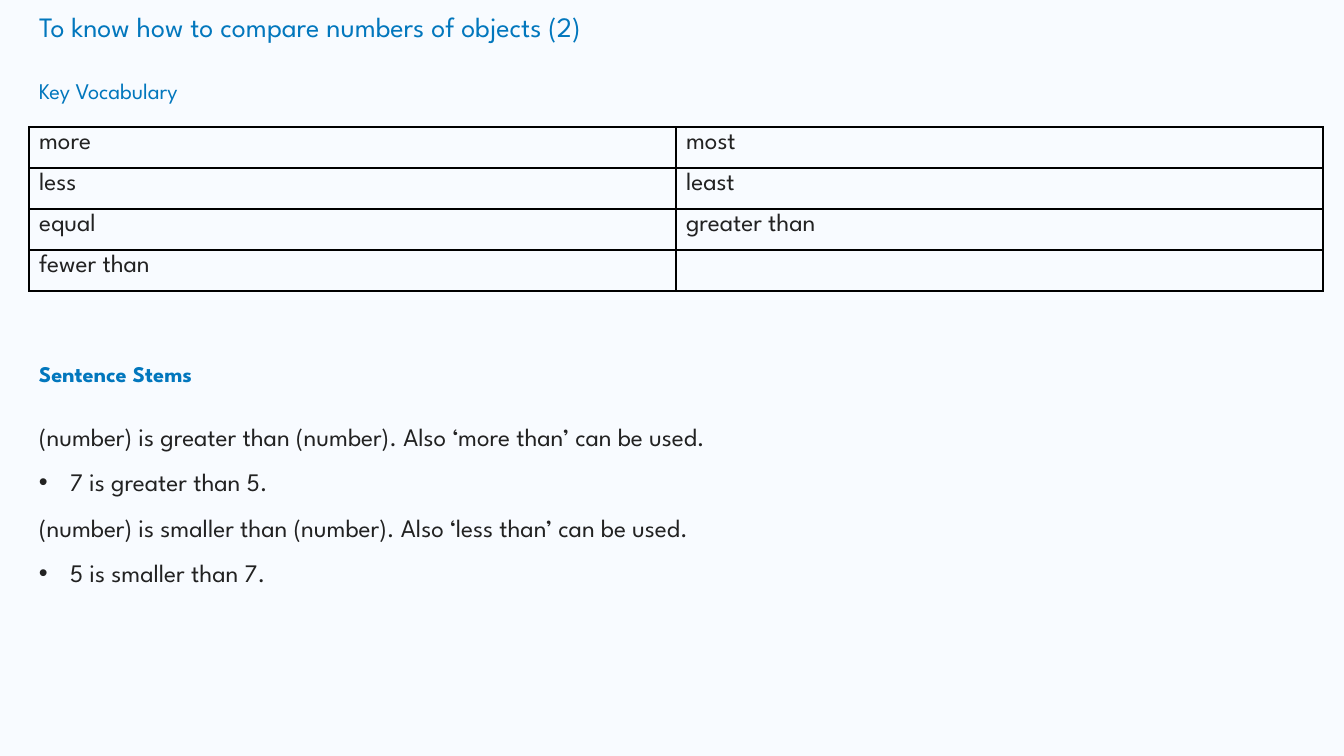
from lxml import etree
from pptx import Presentation
from pptx import util as u
from pptx.dml.color import RGBColor
from pptx.enum import text
from pptx.oxml import ns

EMU_PER_PX = 12192000 / 1344
FONT = "League Spartan"
COLORS = {"background": "F8FBFF", "heading": "0277BD", "body": "222222", "border": "000000"}
VOCABULARY = [
    ("more", "most"),
    ("less", "least"),
    ("equal", "greater than"),
    ("fewer than", ""),
]
STEMS = [
    ("(number) is greater than (number). Also ‘more than’ can be used.", False),
    ("7 is greater than 5.", True),
    ("(number) is smaller than (number). Also ‘less than’ can be used.", False),
    ("5 is smaller than 7.", True),
]


def px(length):
    return u.Emu(round(length * EMU_PER_PX))


def rgb(name):
    return RGBColor.from_string(COLORS[name])


def add_bullet(paragraph):
    props = paragraph._p.get_or_add_pPr()
    props.set("marL", str(px(31)))
    props.set("indent", str(-px(31)))
    color = etree.SubElement(props, ns.qn("a:buClr"))
    etree.SubElement(color, ns.qn("a:srgbClr"), val=COLORS["body"])
    etree.SubElement(props, ns.qn("a:buFont"), typeface="Arial")
    etree.SubElement(props, ns.qn("a:buChar"), char="•")


def write(paragraph, words, size=18, color="body", bold=False, spacing=1.0, bullet=False):
    paragraph.alignment = text.PP_ALIGN.LEFT
    paragraph.line_spacing = spacing
    if bullet:
        add_bullet(paragraph)
    run = paragraph.add_run()
    run.text = words
    run.font.name = FONT
    run.font.size = u.Pt(size)
    run.font.bold = bold
    run.font.color.rgb = rgb(color)


def prepare_frame(frame):
    frame.word_wrap = True
    frame.auto_size = text.MSO_AUTO_SIZE.NONE
    frame.vertical_anchor = text.MSO_ANCHOR.TOP
    return frame


def add_textbox(slide, left, top, width, height):
    box = slide.shapes.add_textbox(px(left), px(top), px(width), px(height))
    return prepare_frame(box.text_frame)


def place_title(slide, left, top, width, height):
    title = slide.shapes.title
    title.left, title.top = px(left), px(top)
    title.width, title.height = px(width), px(height)
    frame = prepare_frame(title.text_frame)
    write(frame.paragraphs[0], "To know how to compare numbers of objects (2)",
          size=20, color="heading")


def add_label(slide, left, top, words, bold=False):
    frame = add_textbox(slide, left, top, 299, 46)
    write(frame.paragraphs[0], words, size=16, color="heading", bold=bold)


def add_borders(cell):
    props = cell._tc.get_or_add_tcPr()
    for position, side in enumerate(("lnL", "lnR", "lnT", "lnB")):
        line = etree.Element(ns.qn(f"a:{side}"), w=str(u.Pt(1)))
        fill = etree.SubElement(line, ns.qn("a:solidFill"))
        etree.SubElement(fill, ns.qn("a:srgbClr"), val=COLORS["border"])
        props.insert(position, line)


def add_vocabulary(slide, left, top, width, row_height):
    add_label(slide, left, top, "Key Vocabulary")
    rows, columns = len(VOCABULARY), len(VOCABULARY[0])
    table = slide.shapes.add_table(rows, columns, px(left), px(top + 55),
                                   px(width), px(row_height * rows)).table
    table.first_row = False
    table.horz_banding = False
    for row, terms in enumerate(VOCABULARY):
        for column, term in enumerate(terms):
            cell = table.cell(row, column)
            cell.fill.background()
            add_borders(cell)
            if term:
                write(cell.text_frame.paragraphs[0], term)


def add_stems(slide, left, top, width, height):
    add_label(slide, left, top, "Sentence Stems", bold=True)
    frame = add_textbox(slide, left, top + 46, width, height - 46)
    for index, (stem, bullet) in enumerate(STEMS):
        paragraph = frame.add_paragraph() if index else frame.paragraphs[0]
        write(paragraph, stem, spacing=1.5, bullet=bullet)


def main():
    deck = Presentation()
    deck.slide_width, deck.slide_height = px(1344), px(756)
    slide = deck.slides.add_slide(deck.slide_layouts[5])
    slide.background.fill.solid()
    slide.background.fill.fore_color.rgb = rgb("background")
    place_title(slide, 29, 4, 1244, 44)
    add_vocabulary(slide, 29, 72, 1294, 41)
    add_stems(slide, 29, 355, 1294, 234)
    deck.save("out.pptx")


if __name__ == "__main__":
    main()
